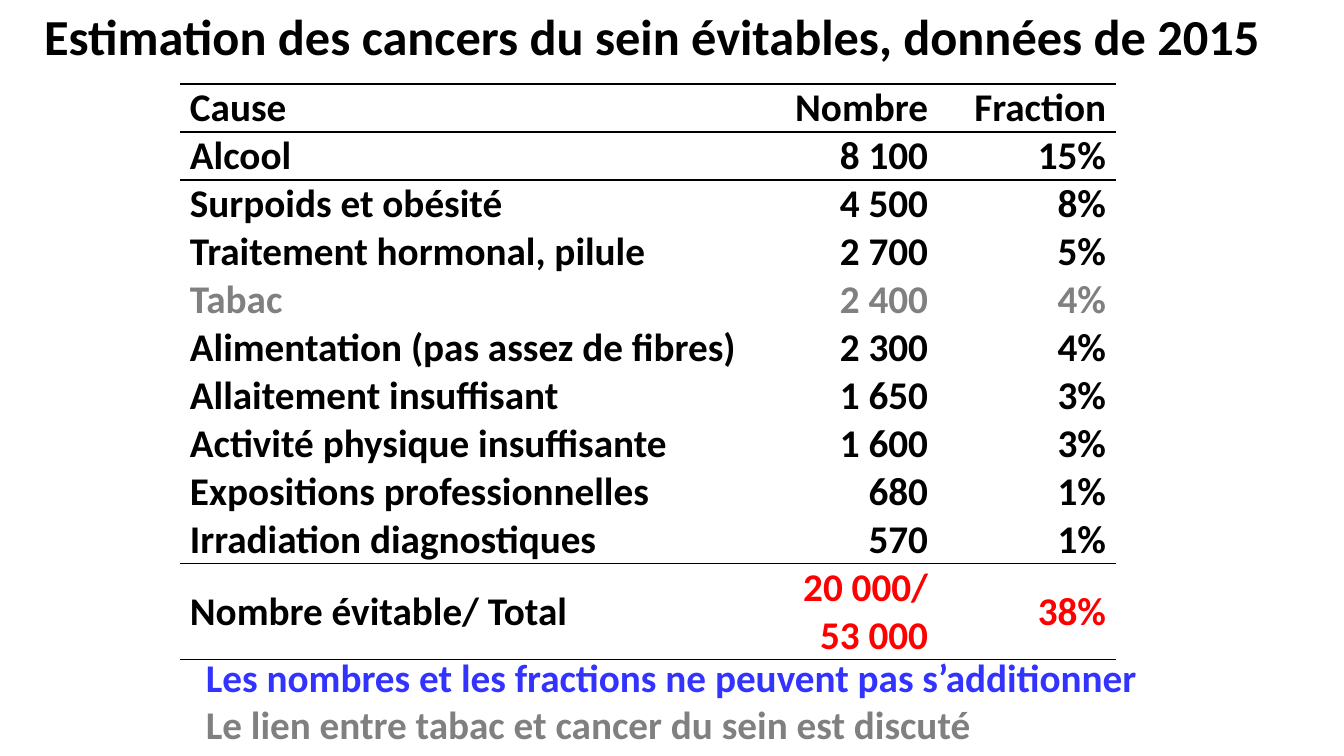
"""Build a slide with a table of avoidable breast cancers by cause."""
from dataclasses import dataclass

from lxml import etree
from pptx import Presentation
from pptx.dml.color import RGBColor
from pptx.enum.text import MSO_ANCHOR, MSO_AUTO_SIZE, PP_ALIGN
from pptx.oxml.ns import qn
from pptx.util import Emu, Pt

LEFT, CENTER, RIGHT = PP_ALIGN.LEFT, PP_ALIGN.CENTER, PP_ALIGN.RIGHT
TOP, MIDDLE = MSO_ANCHOR.TOP, MSO_ANCHOR.MIDDLE
FIXED_SIZE = MSO_AUTO_SIZE.NONE
TITLE_ONLY = 5
EMU_PER_PX = 914400 / 100.8


@dataclass(frozen=True)
class Theme:
    font: str = "Calibri"
    text: str = "000000"
    muted: str = "808080"
    total: str = "FF0000"
    note: str = "3333FF"
    title_size: int = 36
    body_size: int = 28
    rule_width: int = 1


THEME = Theme()

CAUSES = [
    ("Cause", "Nombre", "Fraction"),
    ("Alcool", "8 100", "15%"),
    ("Surpoids et obésité", "4 500", "8%"),
    ("Traitement hormonal, pilule", "2 700", "5%"),
    ("Tabac", "2 400", "4%"),
    ("Alimentation (pas assez de fibres)", "2 300", "4%"),
    ("Allaitement insuffisant", "1 650", "3%"),
    ("Activité physique insuffisante", "1 600", "3%"),
    ("Expositions professionnelles", "680", "1%"),
    ("Irradiation diagnostiques", "570", "1%"),
    ("Nombre évitable/ Total", "20 000/ 53 000", "38%"),
]
TOTAL_ROW = len(CAUSES) - 1
TOBACCO_ROW = 4
RULES = {0, 1, 2, TOTAL_ROW, TOTAL_ROW + 1}
COLUMN_WIDTHS = [580, 178, 178]
ROW_HEIGHT = 48

NOTES = [
    ("Les nombres et les fractions ne peuvent pas s’additionner", THEME.note),
    ("Le lien entre tabac et cancer du sein est discuté", THEME.muted),
]


def px(length):
    return Emu(round(length * EMU_PER_PX))


class SlideBuilder:
    def __init__(self, presentation, theme):
        self.theme = theme
        self.slide = presentation.slides.add_slide(presentation.slide_layouts[TITLE_ONLY])

    def add_text(self, paragraph, text, color, size, alignment=LEFT):
        paragraph.alignment = alignment
        run = paragraph.add_run()
        run.text = text
        run.font.name = self.theme.font
        run.font.size = Pt(size)
        run.font.bold = True
        run.font.color.rgb = RGBColor.from_string(color)

    def title(self, text, left, top, width, height):
        shape = self.slide.shapes.title
        shape.left, shape.top, shape.width, shape.height = map(px, (left, top, width, height))
        frame = shape.text_frame
        frame.auto_size = FIXED_SIZE
        frame.vertical_anchor = MIDDLE
        self.add_text(frame.paragraphs[0], text, self.theme.text, self.theme.title_size, CENTER)

    def text_box(self, lines, left, top, width, height):
        frame = self.slide.shapes.add_textbox(*map(px, (left, top, width, height))).text_frame
        frame.word_wrap = True
        for index, (text, color) in enumerate(lines):
            paragraph = frame.add_paragraph() if index else frame.paragraphs[0]
            self.add_text(paragraph, text, color, self.theme.body_size)

    def border(self, cell, side, visible):
        properties = cell._tc.get_or_add_tcPr()
        line = etree.SubElement(properties, qn(f"a:ln{side}"))
        if not visible:
            etree.SubElement(line, qn("a:noFill"))
            return
        line.set("w", str(Pt(self.theme.rule_width)))
        fill = etree.SubElement(line, qn("a:solidFill"))
        etree.SubElement(fill, qn("a:srgbClr"), val=self.theme.text)

    def cell(self, cell, text, color, alignment, anchor, row):
        cell.margin_left = cell.margin_right = px(10)
        cell.margin_top = cell.margin_bottom = 0
        cell.vertical_anchor = anchor
        for side, visible in (("L", False), ("R", False), ("T", row in RULES), ("B", row + 1 in RULES)):
            self.border(cell, side, visible)
        cell.fill.background()
        self.add_text(cell.text_frame.paragraphs[0], text, color, self.theme.body_size, alignment)

    def table(self, rows, left, top):
        heights = [ROW_HEIGHT] * TOTAL_ROW + [2 * ROW_HEIGHT]
        table = self.slide.shapes.add_table(
            len(rows), len(COLUMN_WIDTHS), px(left), px(top),
            px(sum(COLUMN_WIDTHS)), px(sum(heights))).table
        table.first_row = table.horz_banding = False
        for column, width in zip(table.columns, COLUMN_WIDTHS):
            column.width = px(width)
        for row, values in enumerate(rows):
            table.rows[row].height = px(heights[row])
            for column, text in enumerate(values):
                color = self.theme.text
                if row == TOBACCO_ROW:
                    color = self.theme.muted
                elif row == TOTAL_ROW and column:
                    color = self.theme.total
                self.cell(table.cell(row, column), text, color,
                          RIGHT if column else LEFT,
                          MIDDLE if row == TOTAL_ROW else TOP, row)


def main():
    presentation = Presentation()
    presentation.slide_width, presentation.slide_height = px(1344), px(756)
    builder = SlideBuilder(presentation, THEME)
    builder.title("Estimation des cancers du sein évitables, données de 2015", -34, 0, 1373, 70)
    builder.table(CAUSES, 180, 84)
    builder.text_box(NOTES, 196, 648, 980, 105)
    presentation.save("out.pptx")


if __name__ == "__main__":
    main()
